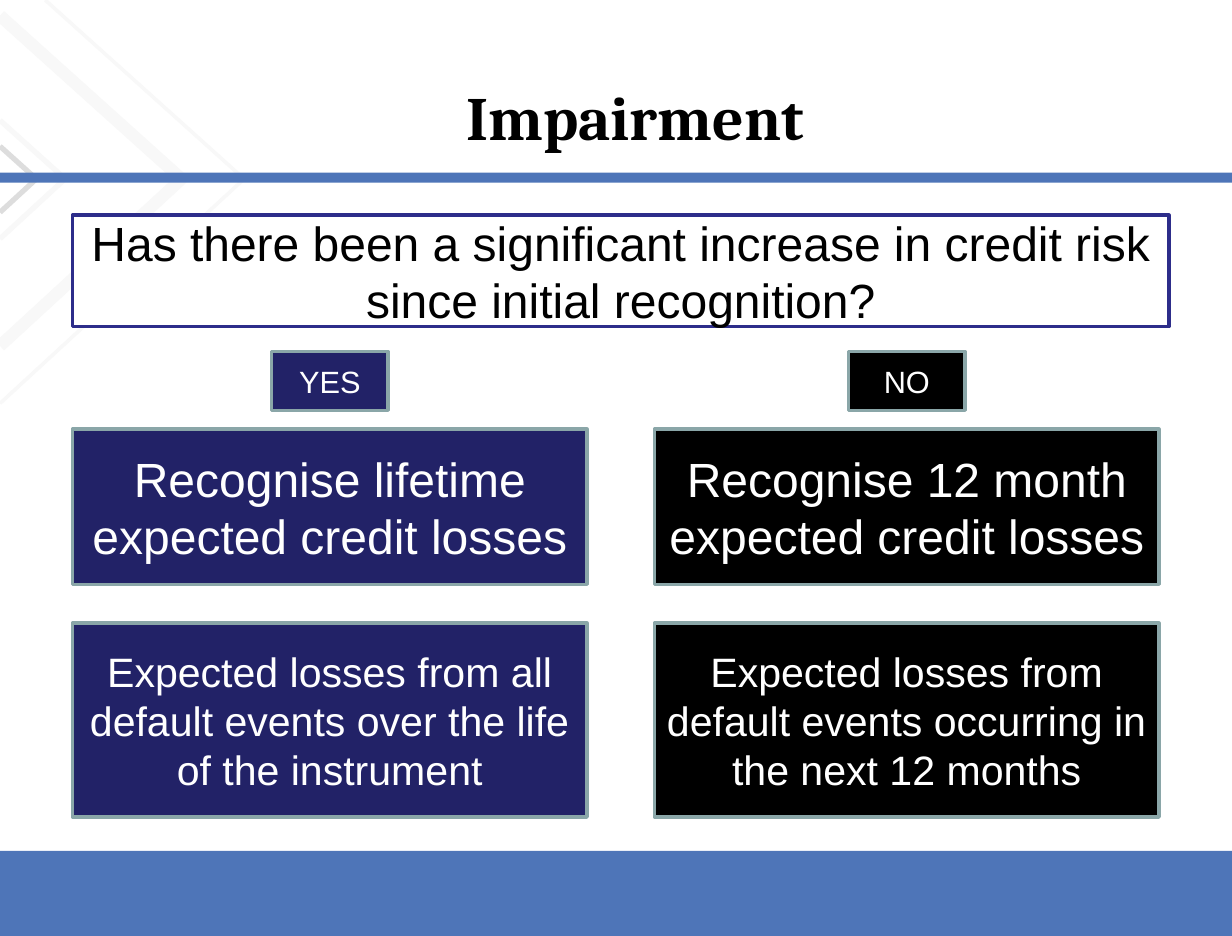
from pptx import Presentation
from pptx.dml.color import RGBColor
from pptx.enum.shapes import MSO_SHAPE
from pptx.enum.text import MSO_ANCHOR, PP_ALIGN
from pptx.util import Cm, Inches, Pt

BLUE, NAVY, BLACK, WHITE = "4E75B8", "222267", "000000", "FFFFFF"
EDGE = "8AA6A8"


def paint(target, color):
    """Give a fill or line format a solid colour."""
    fill = getattr(target, "fill", target)
    fill.solid()
    fill.fore_color.rgb = RGBColor.from_string(color)


def write(shape, text, size, color=WHITE, font="Arial", bold=False):
    """Put centred, formatted text into a shape."""
    frame = shape.text_frame
    frame.word_wrap = True
    frame.vertical_anchor = MSO_ANCHOR.MIDDLE
    frame.margin_left = frame.margin_right = Inches(0.08)
    frame.text = text
    paragraph = frame.paragraphs[0]
    paragraph.alignment = PP_ALIGN.CENTER
    paragraph.font.name = font
    paragraph.font.size = Pt(size)
    paragraph.font.bold = bold
    paragraph.font.color.rgb = RGBColor.from_string(color)


# The page is exactly 25 by 19 cm
prs = Presentation()
prs.slide_width, prs.slide_height = Cm(25), Cm(19)
slide = prs.slides.add_slide(prs.slide_layouts[5])
shapes = slide.shapes

# Background chevrons, cut off at the left and top slide edges
tip_y, rise, fall = 1.43, 0.9, 0.92
for tip_x, color, width in [(0.29, "DDDDDD", 3), (0.52, "F8F8F8", 3),
                            (1.45, "F8F8F8", 7), (1.95, "F8F8F8", 2)]:
    start_x = max(0, tip_x - tip_y / rise)
    start_y = tip_y - (tip_x - start_x) * rise
    builder = shapes.build_freeform(Inches(start_x), Inches(start_y))
    builder.add_line_segments(
        [(Inches(tip_x), Inches(tip_y)),
         (Inches(0), Inches(tip_y + tip_x * fall))], close=False)
    chevron = builder.convert_to_shape()
    chevron.shadow.inherit = False
    chevron.fill.background()
    paint(chevron.line, color)
    chevron.line.width = Pt(width)

# Title rule and footer band
for top, height in [(1.38, 0.08), (6.8, 0.68)]:
    band = shapes.add_shape(MSO_SHAPE.RECTANGLE, Inches(0), Inches(top),
                            prs.slide_width, Inches(height))
    band.shadow.inherit = False
    paint(band, BLUE)
    band.line.fill.background()

# Title
title = shapes.title
title.left, title.top = Inches(1.2), Inches(0.3)
title.width, title.height = Inches(7.75), Inches(1.25)
write(title, "Impairment", 35.4, color=BLACK, font="Cambria", bold=True)

# Question, then one column of boxes for each answer
boxes = [("Has there been a significant increase in credit risk "
          "since initial recognition?",
          0.58, 1.72, 8.76, 0.89, 27.6, WHITE, "2D2D8A", BLACK)]
answers = [
    (0.58, 4.11, 2.17, NAVY, "YES",
     "Recognise lifetime expected credit losses",
     "Expected losses from all default events over the life of the instrument"),
    (5.23, 4.03, 6.78, BLACK, "NO",
     "Recognise 12 month expected credit losses",
     "Expected losses from default events occurring in the next 12 months"),
]
for left, width, answer_left, color, answer, treatment, meaning in answers:
    boxes += [
        (answer, answer_left, 2.81, 0.93, 0.47, 17.7, color, EDGE, WHITE),
        (treatment, left, 3.43, width, 1.24, 27.6, color, EDGE, WHITE),
        (meaning, left, 4.98, width, 1.55, 23.6, color, EDGE, WHITE),
    ]

for text, left, top, width, height, size, color, edge, text_color in boxes:
    box = shapes.add_shape(MSO_SHAPE.RECTANGLE, Inches(left), Inches(top),
                           Inches(width), Inches(height))
    box.shadow.inherit = False
    paint(box, color)
    paint(box.line, edge)
    box.line.width = Pt(2)
    write(box, text, size, color=text_color)

prs.save("out.pptx")
